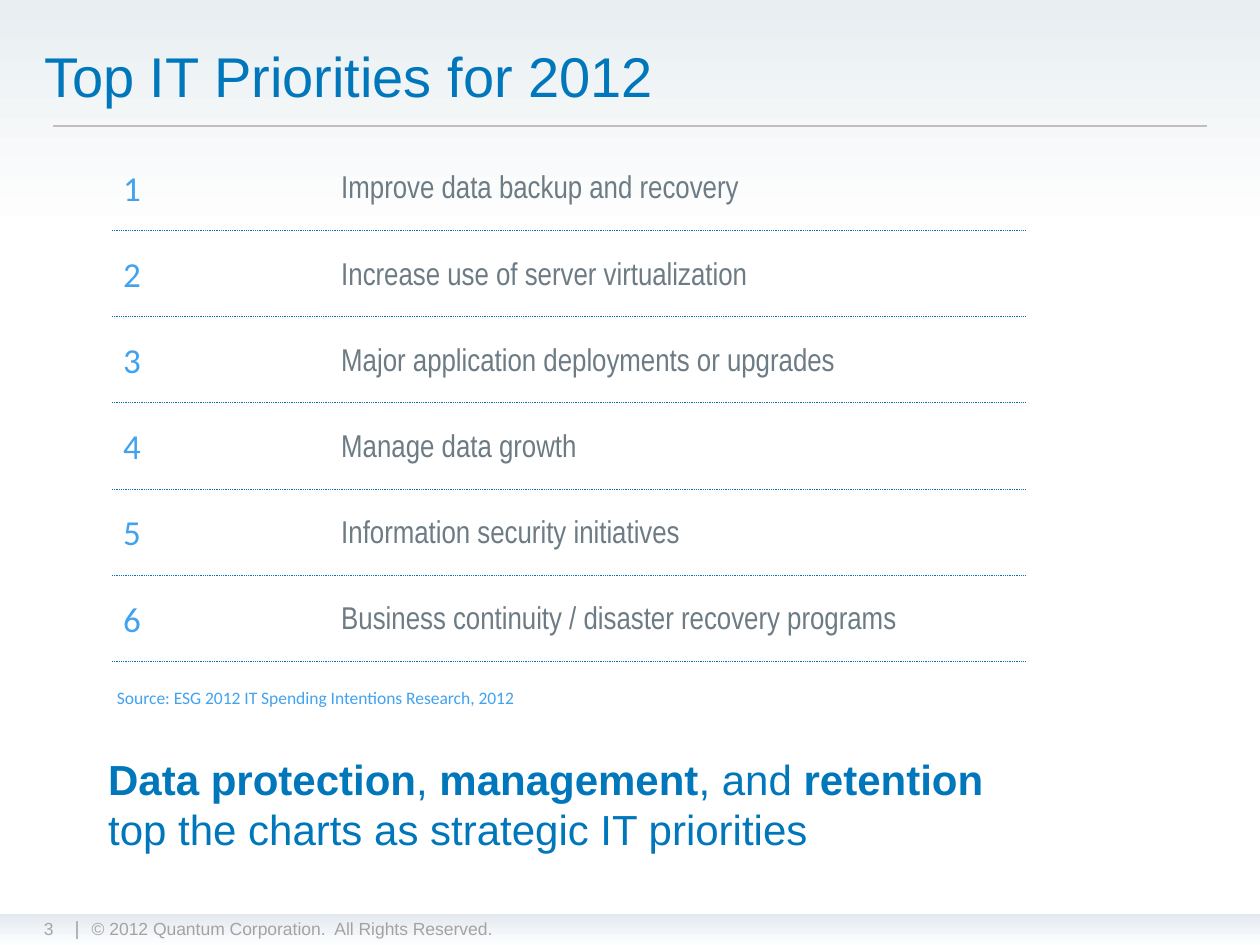
from lxml.etree import SubElement
from pptx import Presentation
from pptx.dml.color import RGBColor
from pptx.enum.dml import MSO_LINE
from pptx.enum.shapes import MSO_CONNECTOR, MSO_SHAPE
from pptx.enum.text import MSO_ANCHOR, PP_ALIGN
from pptx.oxml.ns import qn
from pptx.util import Inches, Pt

TITLE = "Top IT Priorities for 2012"
PRIORITIES = [
    "Improve data backup and recovery",
    "Increase use of server virtualization",
    "Major application deployments or upgrades",
    "Manage data growth",
    "Information security initiatives",
    "Business continuity / disaster recovery programs",
]
SOURCE = "Source: ESG 2012 IT Spending Intentions Research, 2012"
TAKEAWAY = [
    ("Data protection", True),
    (", ", False),
    ("management", True),
    (", and ", False),
    ("retention", True),
    (" top the charts as strategic IT priorities", False),
]
COPYRIGHT = "© 2012 Quantum Corporation.  All Rights Reserved."
BACKDROPS = [
    ((0, 0, 10, 7.5), (0, "E8EEF1"), (0.25, "FFFFFF")),
    ((0, 7.25, 10, 0.25), (0, "E3E9EF"), (1, "FDFEFF")),
]
BLUE, SKY, SLATE, GREY = "0076BB", "41A2EF", "6C7B84", "A3A3A3"
FIRST_RULE, LAST_RULE = 1.83, 5.25


def rgb(value):
    return RGBColor.from_string(value)


def fill_text(frame, text, size, color, font="Arial", wrap=True, anchor=MSO_ANCHOR.TOP):
    """Write a string, or (text, bold) runs, as one left-aligned paragraph."""
    frame.word_wrap = wrap
    frame.vertical_anchor = anchor
    paragraph = frame.paragraphs[0]
    paragraph.alignment = PP_ALIGN.LEFT
    for words, bold in [(text, False)] if isinstance(text, str) else text:
        run = paragraph.add_run()
        run.text = words
        run.font.size = Pt(size)
        run.font.name = font
        run.font.bold = bold
        run.font.color.rgb = rgb(color)


def add_text(slide, box, text, size, color, **style):
    label = slide.shapes.add_textbox(*map(Inches, box))
    fill_text(label.text_frame, text, size, color, **style)


def add_backdrop(slide, box, *stops):
    band = slide.shapes.add_shape(MSO_SHAPE.RECTANGLE, *map(Inches, box))
    band.shadow.inherit = False
    band.line.fill.background()
    band.fill.gradient()
    band.fill.gradient_angle = 270
    for stop, (position, color) in zip(band.fill.gradient_stops, stops):
        stop.position = position
        stop.color.rgb = rgb(color)


def add_rule(slide, left, right, top, color, width, dash=None):
    rule = slide.shapes.add_connector(
        MSO_CONNECTOR.STRAIGHT, *map(Inches, (left, top, right, top)))
    rule.line.color.rgb = rgb(color)
    rule.line.width = Pt(width)
    if dash:
        rule.line.dash_style = dash
    SubElement(rule._element.spPr, qn("a:effectLst"))


def main():
    deck = Presentation()
    deck.slide_width, deck.slide_height = Inches(10), Inches(7.5)
    slide = deck.slides.add_slide(deck.slide_layouts[5])

    for backdrop in BACKDROPS:
        add_backdrop(slide, *backdrop)
    add_rule(slide, 0.42, 9.58, 1, "BFBFBF", 0.75)

    title = slide.shapes.title
    slide.shapes._spTree.append(title._element)
    title.left, title.top, title.width, title.height = map(Inches, (0.25, 0.25, 9.19, 0.7))
    fill_text(title.text_frame, TITLE, 32, BLUE, anchor=MSO_ANCHOR.MIDDLE)

    row_step = (LAST_RULE - FIRST_RULE) / (len(PRIORITIES) - 1)
    for index, priority in enumerate(PRIORITIES):
        rule_top = FIRST_RULE + index * row_step
        add_text(slide, (0.88, rule_top - 0.56, 0.36, 0.44), str(index + 1), 20, SKY,
                 font="Calibri", wrap=False)
        add_text(slide, (2.61, rule_top - 0.55, 5.58, 0.4), priority, 18, SLATE,
                 font="Arial Narrow")
        add_rule(slide, 0.89, 8.14, rule_top, "0973B9", 0.5, MSO_LINE.ROUND_DOT)

    add_text(slide, (0.83, 5.4, 7.32, 0.27), SOURCE, 10, SKY, font="Calibri")
    add_text(slide, (0.76, 5.93, 7.31, 0.91), TAKEAWAY, 24, BLUE)

    add_text(slide, (0.25, 7.24, 0.51, 0.27), "3", 10, "A6A6A6")
    add_text(slide, (0.5, 7.22, 0.19, 0.27), "|", 11, GREY)
    add_text(slide, (0.63, 7.24, 5, 0.47), COPYRIGHT, 10, GREY)
    deck.save("out.pptx")


if __name__ == "__main__":
    main()
